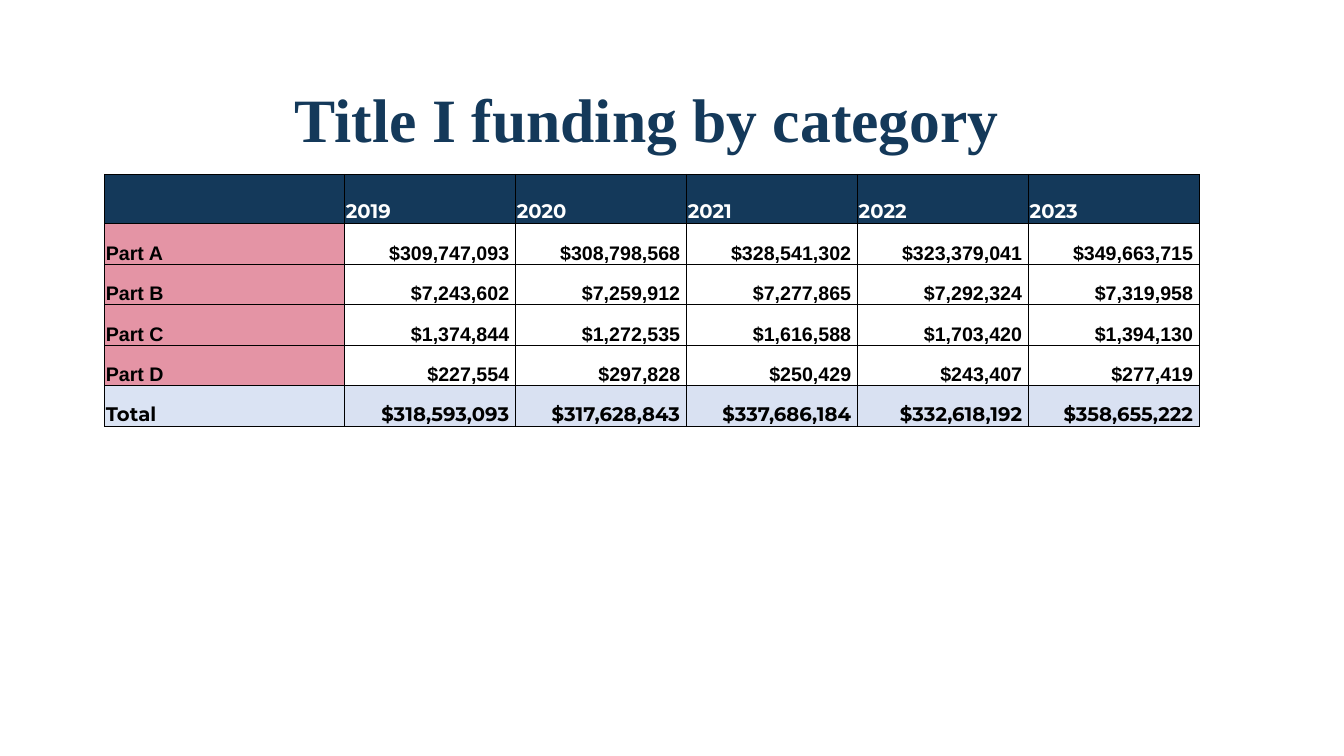
from dataclasses import dataclass

from lxml import etree
from pptx import Presentation
from pptx import util as u
from pptx.dml.color import RGBColor
from pptx.enum import text
from pptx.oxml.ns import qn


@dataclass(frozen=True)
class Theme:
    navy: str = "14395A"
    rose: str = "E494A5"
    total_label: str = "DAE3F3"
    total_value: str = "D9E1F2"
    white: str = "FFFFFF"
    black: str = "000000"
    title_font: str = "Times New Roman"
    accent_font: str = "Montserrat"
    body_font: str = "Arial"
    title_size: int = 44
    table_size: int = 14
    border: int = 1


theme = Theme()


def add_run(paragraph, words, font, size, color):
    run = paragraph.add_run()
    run.text = words
    run.font.name = font
    run.font.size = u.Pt(size)
    run.font.bold = True
    run.font.color.rgb = RGBColor.from_string(color)


def add_borders(cell):
    """Draw all four sides; the lines must come before the fill in the cell's XML."""
    properties = cell._tc.get_or_add_tcPr()
    for place, side in enumerate(("a:lnL", "a:lnR", "a:lnT", "a:lnB")):
        line = etree.Element(qn(side), w=str(u.Pt(theme.border)))
        fill = etree.SubElement(line, qn("a:solidFill"))
        etree.SubElement(fill, qn("a:srgbClr"), val=theme.black)
        properties.insert(place, line)


years = ["2019", "2020", "2021", "2022", "2023"]
funding = {
    "Part A": [309747093, 308798568, 328541302, 323379041, 349663715],
    "Part B": [7243602, 7259912, 7277865, 7292324, 7319958],
    "Part C": [1374844, 1272535, 1616588, 1703420, 1394130],
    "Part D": [227554, 297828, 250429, 243407, 277419],
}
funding["Total"] = [sum(amounts) for amounts in zip(*funding.values())]
rows = [["", *years]]
rows += [[part, *(f"${amount:,} " for amount in amounts)] for part, amounts in funding.items()]

deck = Presentation()
deck.slide_width = u.Inches(13.33)
deck.slide_height = u.Inches(7.5)
slide = deck.slides.add_slide(deck.slide_layouts[5])

heading = slide.shapes.title
heading.left, heading.top = u.Inches(0.67), u.Inches(0.68)
heading.width, heading.height = u.Inches(11.5), u.Inches(0.92)
heading.text_frame.auto_size = text.MSO_AUTO_SIZE.NONE
heading.text_frame.vertical_anchor = text.MSO_ANCHOR.BOTTOM
heading_line = heading.text_frame.paragraphs[0]
heading_line.alignment = text.PP_ALIGN.CENTER
heading_line.line_spacing = 0.9
add_run(heading_line, "Title I funding by category",
        theme.title_font, theme.title_size, theme.navy)

table_width, label_width = u.Inches(10.86), u.Inches(2.38)
table_height, header_height = u.Inches(2.5), u.Inches(0.49)
funding_table = slide.shapes.add_table(
    len(rows), len(rows[0]), u.Inches(1.04), u.Inches(1.73), table_width, table_height).table
funding_table.first_row = False
funding_table.horz_banding = False
for c, column in enumerate(funding_table.columns):
    column.width = label_width if c == 0 else (table_width - label_width) // len(years)
for r, row in enumerate(funding_table.rows):
    row.height = header_height if r == 0 else (table_height - header_height) // len(funding)

for r, entries in enumerate(rows):
    is_header, is_total = r == 0, r == len(rows) - 1
    for c, entry in enumerate(entries):
        is_label = c == 0
        if is_header:
            fill = theme.navy
        elif is_total:
            fill = theme.total_label if is_label else theme.total_value
        else:
            fill = theme.rose if is_label else None

        cell = funding_table.cell(r, c)
        cell.vertical_anchor = text.MSO_ANCHOR.BOTTOM
        cell.margin_left = cell.margin_right = cell.margin_top = u.Inches(0.01)
        cell.margin_bottom = 0
        if fill:
            cell.fill.solid()
            cell.fill.fore_color.rgb = RGBColor.from_string(fill)
        else:
            cell.fill.background()
        add_borders(cell)

        if entry:
            paragraph = cell.text_frame.paragraphs[0]
            if not (is_header or is_label):
                paragraph.alignment = text.PP_ALIGN.RIGHT
            add_run(paragraph, entry,
                    theme.accent_font if is_header or is_total else theme.body_font,
                    theme.table_size, theme.white if is_header else theme.black)

deck.save("out.pptx")
